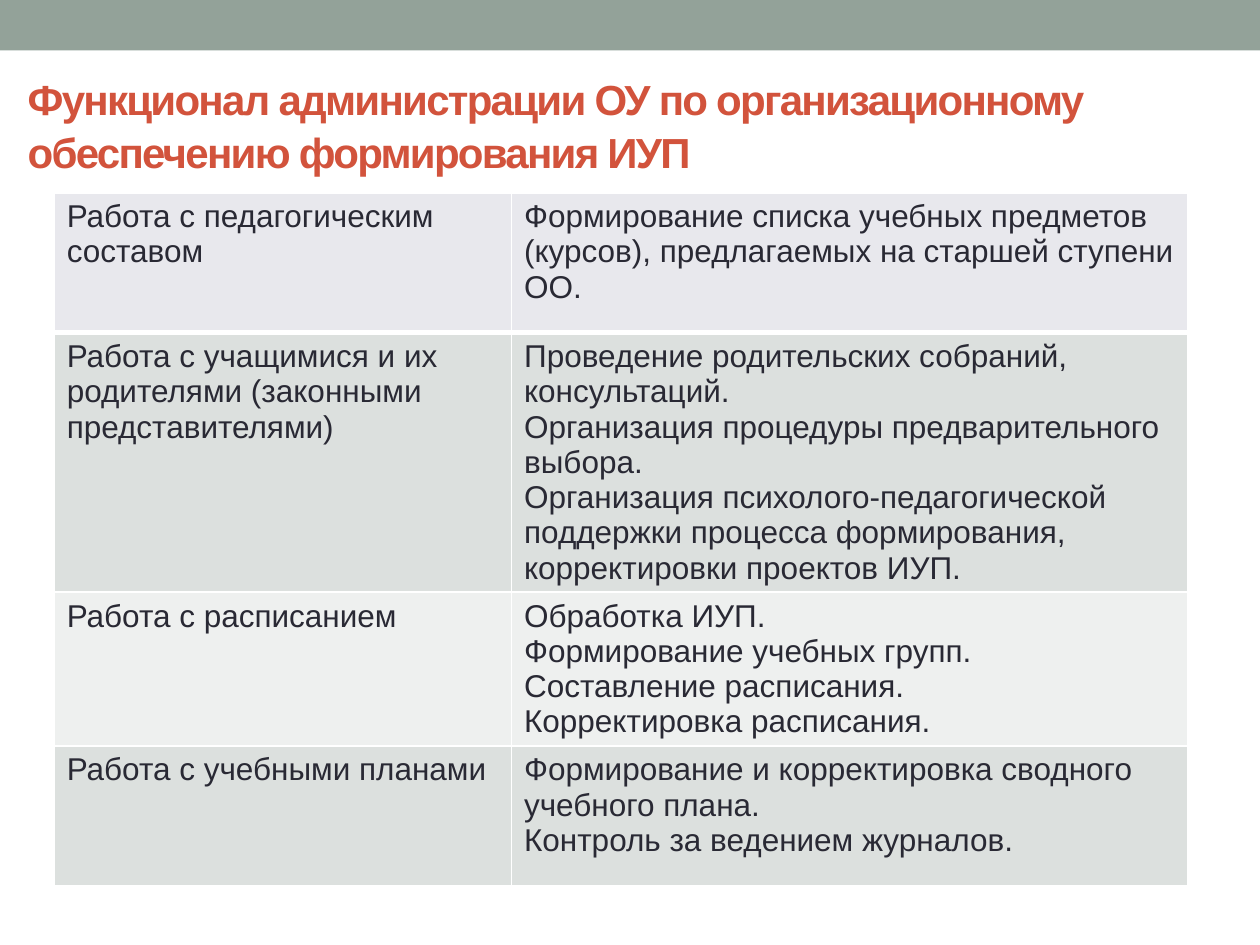
from lxml.etree import SubElement
from pptx import Presentation
from pptx.dml.color import RGBColor
from pptx.enum.shapes import MSO_SHAPE
from pptx.enum.text import MSO_ANCHOR, MSO_AUTO_SIZE, PP_ALIGN
from pptx.oxml.ns import qn
from pptx.util import Inches, Pt


def color(value):
    return RGBColor.from_string(value)


def border(cell, side, width):
    line = SubElement(cell._tc.get_or_add_tcPr(), qn(f"a:{side}"), w=str(Pt(width)))
    fill = SubElement(line, qn("a:solidFill"))
    SubElement(fill, qn("a:srgbClr"), val="FFFFFF")


DUTIES = [
    ("Работа с педагогическим составом",
     ["Формирование списка учебных предметов (курсов), предлагаемых на старшей ступени ОО."],
     "E8E8ED"),
    ("Работа с учащимися и их родителями (законными представителями)",
     ["Проведение родительских собраний, консультаций.",
      "Организация процедуры предварительного выбора.",
      "Организация психолого-педагогической поддержки процесса формирования, "
      "корректировки проектов ИУП."],
     "DCE0DE"),
    ("Работа с расписанием",
     ["Обработка ИУП.", "Формирование учебных групп.",
      "Составление расписания.", "Корректировка расписания."],
     "EEF0EF"),
    ("Работа с учебными планами",
     ["Формирование и корректировка сводного учебного плана.",
      "Контроль за ведением журналов."],
     "DCE0DE"),
]

prs = Presentation()
prs.slide_width, prs.slide_height = Inches(10), Inches(7.5)
slide = prs.slides.add_slide(prs.slide_layouts[5])

band = slide.shapes.add_shape(MSO_SHAPE.RECTANGLE, 0, 0, Inches(10), Inches(0.4))
band.shadow.inherit = False
band.fill.solid()
band.fill.fore_color.rgb = color("93A299")
band.line.fill.background()

title = slide.shapes.title
title.left, title.top = Inches(0.12), Inches(0.44)
title.width, title.height = Inches(9.88), Inches(1.08)
title.text_frame.word_wrap = True
title.text_frame.auto_size = MSO_AUTO_SIZE.NONE
title.text_frame.vertical_anchor = MSO_ANCHOR.MIDDLE
heading = title.text_frame.paragraphs[0]
heading.alignment = PP_ALIGN.LEFT
heading.line_spacing = 1.06
run = heading.add_run()
run.text = "Функционал администрации ОУ по организационному обеспечению формирования ИУП"
run.font.name, run.font.size, run.font.bold = "Arial", Pt(24), True
run.font.color.rgb = color("D2533C")
run._r.get_or_add_rPr().set("spc", "-100")

row_height = Inches(1.11)
duties = slide.shapes.add_table(len(DUTIES), 2, Inches(0.43), Inches(1.53),
                                Inches(9), row_height * len(DUTIES)).table
duties.columns[0].width, duties.columns[1].width = Inches(3.63), Inches(5.37)

for row, (area, tasks, shade) in enumerate(DUTIES):
    duties.rows[row].height = row_height
    for column, lines in enumerate([[area], tasks]):
        cell = duties.cell(row, column)
        for side in ("lnL", "lnR", "lnT", "lnB"):
            heavy = (row, side) in ((0, "lnB"), (1, "lnT"))
            border(cell, side, 3 if heavy else 1)
        cell.fill.solid()
        cell.fill.fore_color.rgb = color(shade)
        for index, line in enumerate(lines):
            frame = cell.text_frame
            paragraph = frame.add_paragraph() if index else frame.paragraphs[0]
            run = paragraph.add_run()
            run.text = line
            run.font.name, run.font.size, run.font.bold = "Arial", Pt(18), False
            run.font.color.rgb = color("292934")

prs.save("out.pptx")
